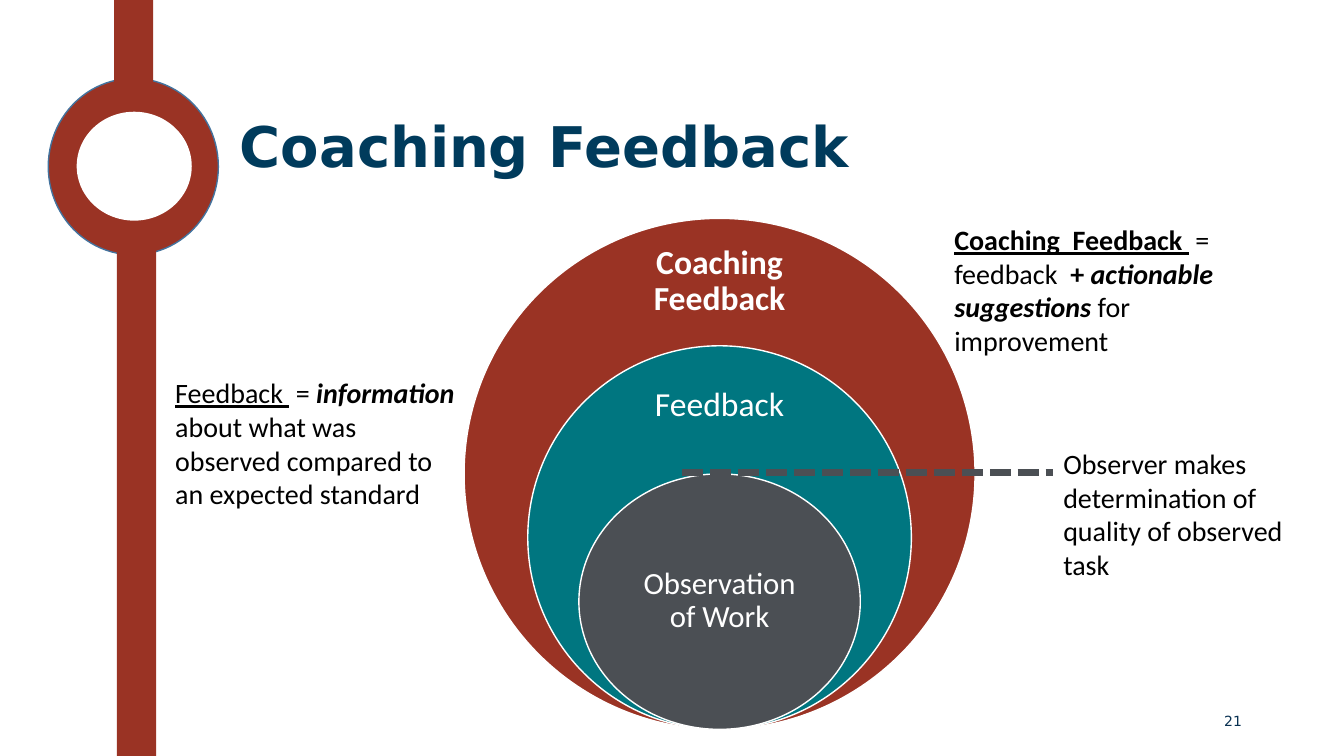
from dataclasses import dataclass

from lxml import etree
from pptx import Presentation
from pptx.dml.color import RGBColor
from pptx.enum import dml, shapes, text
from pptx.oxml import ns
from pptx.slide import Slide
from pptx.util import Pt


@dataclass(frozen=True)
class Theme:
    red: str = "9A3324"
    teal: str = "007680"
    gray: str = "4B4F54"
    navy: str = "003B5C"
    number: str = "093152"
    rim: str = "43739E"
    white: str = "FFFFFF"
    black: str = "000000"
    body_font: str = "Calibri"
    title_font: str = "DejaVu Sans"
    title_size: float = 40
    label_size: float = 24
    core_size: float = 22
    note_size: float = 20
    number_size: float = 10


@dataclass(frozen=True)
class Box:
    left: float
    top: float
    width: float
    height: float


@dataclass(frozen=True)
class Run:
    text: str
    bold: bool = False
    italic: bool = False
    underline: bool = False


@dataclass(frozen=True)
class Plate:
    kind: shapes.MSO_SHAPE
    box: Box
    fill: str
    line: str | None = None


@dataclass(frozen=True)
class Ring:
    width: float
    height: float
    fill: str
    label: Run
    label_box: Box
    label_size: float
    inset: float


@dataclass(frozen=True)
class Note:
    box: Box
    runs: tuple[Run, ...]


THEME = Theme()
OVAL = shapes.MSO_SHAPE.OVAL
RECTANGLE = shapes.MSO_SHAPE.RECTANGLE
RINGS_CENTER = 514
RINGS_BOTTOM = 521

RAIL = (
    Plate(OVAL, Box(34.5, 56, 121.5, 126), THEME.red, THEME.rim),
    Plate(RECTANGLE, Box(83.5, 178.5, 28, 361.5), THEME.red),
    Plate(RECTANGLE, Box(81.5, -8, 28, 67), THEME.red),
    Plate(OVAL, Box(54.8, 79.8, 82.2, 77.8), THEME.white),
)

RINGS = (
    Ring(365, 365, THEME.red, Run("Coaching Feedback", bold=True),
         Box(450.5, 173.5, 127, 55), THEME.label_size, 13.5),
    Ring(274, 274, THEME.teal, Run("Feedback"),
         Box(450.5, 264, 127, 51), THEME.label_size, 13.5),
    Ring(201, 182.5, THEME.gray, Run("Observation of Work"),
         Box(443, 384, 142, 91), THEME.core_size, 12),
)

NOTES = (
    Note(Box(752.4, 315.4, 207, 104.4),
         (Run("Observer makes determination of quality of observed task"),)),
    Note(Box(118.1, 265, 218.2, 104.4),
         (Run("Feedback ", underline=True),
          Run(" = "),
          Run("information", bold=True, italic=True),
          Run(" about what was observed compared to an expected standard"))),
    Note(Box(674.6, 155.5, 233.3, 104.4),
         (Run("Coaching  Feedback ", bold=True, underline=True),
          Run(" ", bold=True),
          Run("= feedback  "),
          Run("+ ", bold=True),
          Run("actionable suggestions ", bold=True, italic=True),
          Run("for improvement"))),
)


def add_plate(slide: Slide, plate: Plate) -> None:
    box = plate.box
    shape = slide.shapes.add_shape(
        plate.kind, Pt(box.left), Pt(box.top), Pt(box.width), Pt(box.height))
    shape.shadow.inherit = False
    shape.fill.solid()
    shape.fill.fore_color.rgb = RGBColor.from_string(plate.fill)
    if plate.line is None:
        shape.line.fill.background()
    else:
        shape.line.color.rgb = RGBColor.from_string(plate.line)
        shape.line.width = Pt(1)


def add_text(slide: Slide, box: Box, *runs: Run, size: float,
             color: str = THEME.black, font: str = THEME.body_font,
             align: text.PP_ALIGN = text.PP_ALIGN.LEFT,
             anchor: text.MSO_ANCHOR = text.MSO_ANCHOR.TOP,
             spacing: float = 1.0, inset: float | None = None) -> None:
    shape = slide.shapes.add_textbox(
        Pt(box.left), Pt(box.top), Pt(box.width), Pt(box.height))
    frame = shape.text_frame
    frame.word_wrap = True
    frame.vertical_anchor = anchor
    if inset is not None:
        frame.margin_left = frame.margin_right = Pt(inset)
        frame.margin_top = frame.margin_bottom = Pt(inset)
    paragraph = frame.paragraphs[0]
    paragraph.alignment = align
    paragraph.line_spacing = spacing
    for item in runs:
        run = paragraph.add_run()
        run.text = item.text
        run.font.name = font
        run.font.size = Pt(size)
        run.font.color.rgb = RGBColor.from_string(color)
        run.font.bold = item.bold
        run.font.italic = item.italic
        run.font.underline = item.underline


def add_ring(slide: Slide, ring: Ring) -> None:
    box = Box(RINGS_CENTER - ring.width / 2, RINGS_BOTTOM - ring.height,
              ring.width, ring.height)
    add_plate(slide, Plate(OVAL, box, ring.fill, THEME.white))
    add_text(slide, ring.label_box, ring.label, size=ring.label_size,
             color=THEME.white, align=text.PP_ALIGN.CENTER,
             anchor=text.MSO_ANCHOR.MIDDLE, spacing=0.9, inset=ring.inset)


def add_dashed_line(slide: Slide, start: float, end: float, top: float) -> None:
    connector = slide.shapes.add_connector(
        shapes.MSO_CONNECTOR.STRAIGHT, Pt(start), Pt(top), Pt(end), Pt(top))
    connector.line.color.rgb = RGBColor.from_string(THEME.gray)
    connector.line.width = Pt(5)
    connector.line.dash_style = dml.MSO_LINE.SQUARE_DOT
    properties = connector._element.find(ns.qn("p:spPr"))
    etree.SubElement(properties, ns.qn("a:effectLst"))


def main() -> None:
    presentation = Presentation()
    presentation.slide_width = Pt(960)
    presentation.slide_height = Pt(540)
    slide = presentation.slides.add_slide(presentation.slide_layouts[6])
    for plate in RAIL:
        add_plate(slide, plate)
    add_text(slide, Box(164.2, 58.3, 785, 97.2), Run("Coaching Feedback", bold=True),
             size=THEME.title_size, color=THEME.navy, font=THEME.title_font,
             anchor=text.MSO_ANCHOR.MIDDLE, spacing=0.9)
    for ring in RINGS:
        add_ring(slide, ring)
    add_dashed_line(slide, 487.5, 752.4, 337.7)
    for note in NOTES:
        add_text(slide, note.box, *note.runs, size=THEME.note_size)
    add_text(slide, Box(678.2, 500.4, 216, 28.8), Run("21"),
             size=THEME.number_size, color=THEME.number, font=THEME.title_font,
             align=text.PP_ALIGN.RIGHT, anchor=text.MSO_ANCHOR.MIDDLE)
    presentation.save("out.pptx")


if __name__ == "__main__":
    main()
